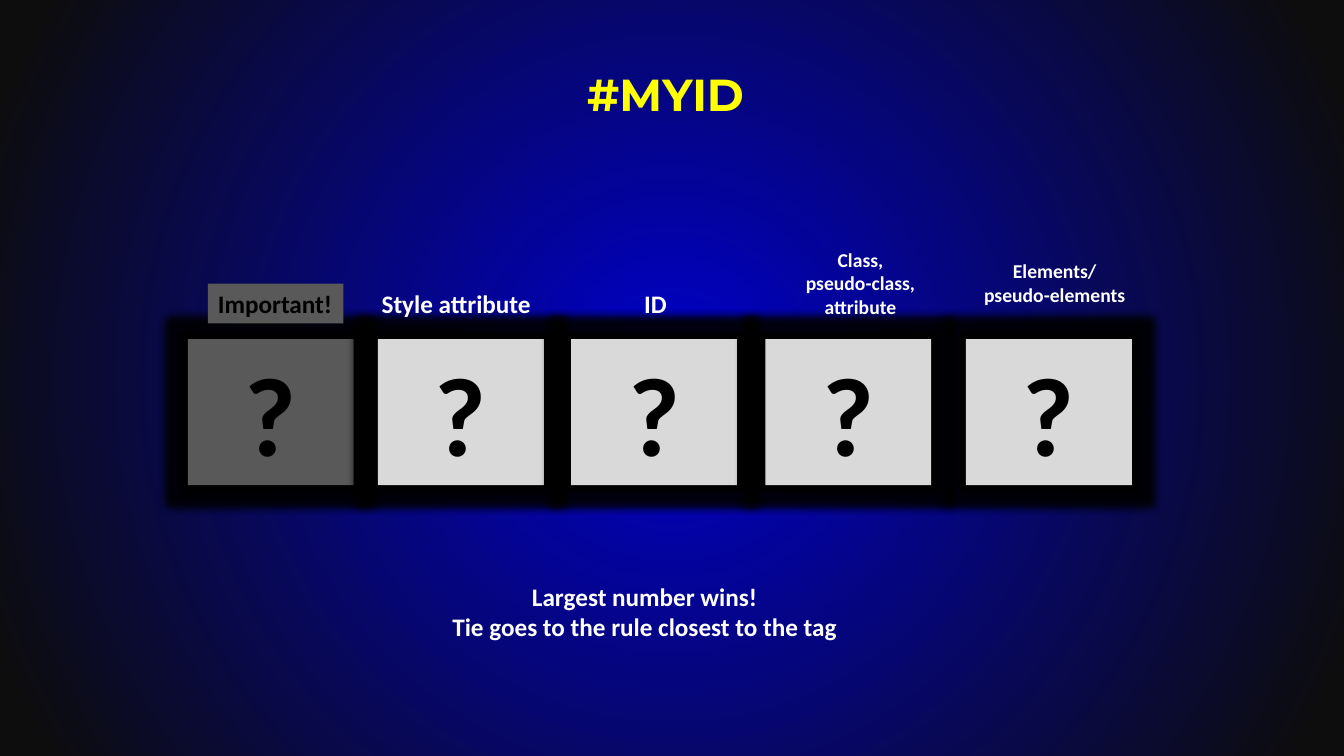
from dataclasses import dataclass

from pptx import Presentation
from pptx.dml.color import RGBColor
from pptx.enum.shapes import MSO_SHAPE
from pptx.enum.text import MSO_ANCHOR, MSO_AUTO_SIZE, PP_ALIGN
from pptx.oxml import parse_xml
from pptx.oxml.ns import nsdecls
from pptx.util import Pt

EMU_PER_PX = 9525


@dataclass(frozen=True)
class Theme:
    center: str = "0000CC"
    edge: str = "0D0D0D"
    heading: str = "FFFF00"
    light: str = "FFFFFF"
    dark: str = "000000"
    card: str = "D9D9D9"
    muted_card: str = "595959"
    heading_font: str = "Montserrat"
    body_font: str = "Calibri"
    heading_size: int = 32
    digit_size: int = 80
    label_size: int = 18
    small_size: int = 14


def px(*lengths):
    return [length * EMU_PER_PX for length in lengths]


def write(frame, text, *, font, size, color, align=PP_ALIGN.CENTER,
          anchor=MSO_ANCHOR.TOP, wrap=True, fit=MSO_AUTO_SIZE.SHAPE_TO_FIT_TEXT):
    frame.text = text
    frame.word_wrap = wrap
    frame.auto_size = fit
    frame.vertical_anchor = anchor
    for paragraph in frame.paragraphs:
        paragraph.alignment = align
        for run in paragraph.runs:
            run.font.name = font
            run.font.size = Pt(size)
            run.font.bold = True
            run.font.color.rgb = RGBColor.from_string(color)


class SpecificitySlide:
    def __init__(self, presentation, theme):
        self.theme = theme
        self.slide = presentation.slides.add_slide(presentation.slide_layouts[5])

    def background(self):
        self.slide.element.cSld.insert(0, parse_xml(
            f'<p:bg {nsdecls("p", "a")}><p:bgPr><a:gradFill rotWithShape="1"><a:gsLst>'
            f'<a:gs pos="0"><a:srgbClr val="{self.theme.center}"/></a:gs>'
            f'<a:gs pos="95000"><a:srgbClr val="{self.theme.edge}"/></a:gs></a:gsLst>'
            '<a:path path="circle"><a:fillToRect l="50000" t="50000" r="50000" b="50000"/>'
            '</a:path></a:gradFill><a:effectLst/></p:bgPr></p:bg>'))

    def title(self, text, bounds):
        heading = self.slide.shapes.title
        heading.left, heading.top, heading.width, heading.height = px(*bounds)
        write(heading.text_frame, text, font=self.theme.heading_font,
              size=self.theme.heading_size, color=self.theme.heading,
              anchor=MSO_ANCHOR.MIDDLE, fit=MSO_AUTO_SIZE.NONE)

    def card(self, text, bounds, fill):
        card = self.slide.shapes.add_shape(MSO_SHAPE.RECTANGLE, *px(*bounds))
        card.fill.solid()
        card.fill.fore_color.rgb = RGBColor.from_string(fill)
        card.line.fill.background()
        card.shadow.inherit = False
        card.element.spPr.find("{*}effectLst").append(parse_xml(
            f'<a:glow {nsdecls("a")} rad="{px(15)[0]}"><a:srgbClr val="{self.theme.dark}">'
            '<a:alpha val="90000"/></a:srgbClr></a:glow>'))
        write(card.text_frame, text, font=self.theme.body_font,
              size=self.theme.digit_size, color=self.theme.dark)

    def label(self, text, bounds, size, color=None, fill=None, **style):
        label = self.slide.shapes.add_textbox(*px(*bounds))
        if fill:
            label.fill.solid()
            label.fill.fore_color.rgb = RGBColor.from_string(fill)
        write(label.text_frame, text, font=self.theme.body_font, size=size,
              color=color or self.theme.light, **style)


def main():
    presentation = Presentation()
    presentation.slide_width, presentation.slide_height = px(1280, 720)
    theme = Theme()
    page = SpecificitySlide(presentation, theme)
    page.background()
    page.title("#MYID ", (64, 29, 1152, 120))

    for left in (179, 360, 544, 729, 920):
        fill = theme.muted_card if left == 179 else theme.card
        page.card("?", (left, 323, 158, 139), fill)

    single = {"size": theme.label_size, "align": PP_ALIGN.LEFT, "wrap": False}
    page.label("Important!", (198, 270, 129, 38), color=theme.dark,
               fill=theme.muted_card, **single)
    page.label("Style attribute", (354, 270, 163, 38), **single)
    page.label("ID", (604, 270, 41, 38), **single)
    page.label("Class, pseudo-class, attribute", (756, 231, 127, 78), theme.small_size)
    page.label("Elements/\npseudo-elements", (927, 242, 155, 55),
               theme.small_size, wrap=False)
    page.label("Largest number wins!\nTie goes to the rule closest to the tag",
               (420, 549, 388, 68), theme.label_size, wrap=False)

    presentation.save("out.pptx")


if __name__ == "__main__":
    main()
